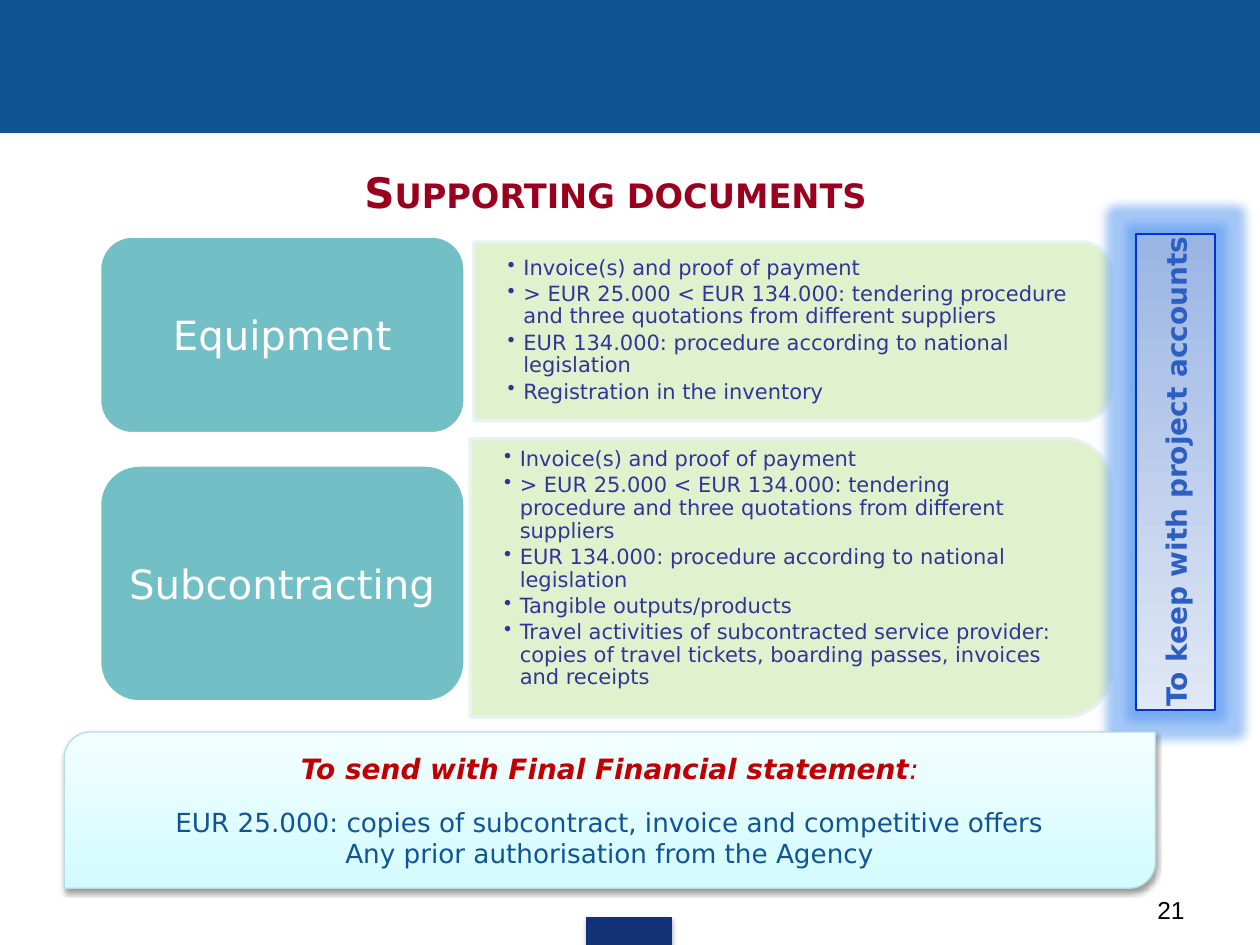
"""Build the slide on supporting documents for equipment and subcontracting."""
from dataclasses import dataclass

from lxml import etree
from pptx import Presentation
from pptx.dml.color import RGBColor
from pptx.enum.shapes import MSO_SHAPE
from pptx.enum.text import MSO_ANCHOR, PP_ALIGN
from pptx.oxml.ns import qn
from pptx.util import Pt

RECT = MSO_SHAPE.RECTANGLE
ROUNDED = MSO_SHAPE.ROUNDED_RECTANGLE
ROUND_SAME = MSO_SHAPE.ROUND_2_SAME_RECTANGLE
ROUND_DIAGONAL = MSO_SHAPE.ROUND_2_DIAG_RECTANGLE
TOP, MIDDLE, BOTTOM = MSO_ANCHOR.TOP, MSO_ANCHOR.MIDDLE, MSO_ANCHOR.BOTTOM
LEFT, CENTER, RIGHT = PP_ALIGN.LEFT, PP_ALIGN.CENTER, PP_ALIGN.RIGHT


@dataclass(frozen=True)
class Theme:
    """Colours, fonts and type sizes of the slide."""
    font: str = "DejaVu Sans"
    number_font: str = "Arial"
    band: str = "0F5494"
    tab: str = "133176"
    title: str = "9A001D"
    panel: str = "DDF0C8"
    panel_line: str = "E7F3F4"
    bullet: str = "333399"
    topic: str = "72BFC5"
    white: str = "FFFFFF"
    black: str = "000000"
    side_text: str = "2D5EC1"
    side_line: str = "0033CC"
    side_fill: tuple = ("E1E8F5", "9AB5E4")
    glow: str = "4A90EE"
    notice_heading: str = "C00000"
    notice_line: str = "B6DCDF"
    notice_fill: tuple = ("D3FBFF", "F2FEFF")
    title_size: float = 24
    topic_size: float = 23
    heading_size: float = 16
    notice_size: float = 15
    number_size: float = 14
    bullet_size: float = 12


class SlideBuilder:
    """Holds the theme and the current slide and draws each kind of element."""

    def __init__(self, slide, theme):
        self.slide, self.theme = slide, theme

    def shape(self, kind, box, fill, line, weight=0.75):
        """Add a preset shape with a solid or two-colour gradient fill."""
        shape = self.slide.shapes.add_shape(kind, *map(Pt, box))
        shape.shadow.inherit = False
        if isinstance(fill, tuple):
            shape.fill.gradient()
            for stop, position, color in zip(shape.fill.gradient_stops, (0, 1), fill):
                stop.position = position
                stop.color.rgb = RGBColor.from_string(color)
        else:
            shape.fill.solid()
            shape.fill.fore_color.rgb = RGBColor.from_string(fill)
        shape.line.color.rgb = RGBColor.from_string(line)
        shape.line.width = Pt(weight)
        return shape

    def effect(self, shape, name, color, alpha, **lengths):
        """Add a glow or shadow to the shape's effect list."""
        effects = shape._element.spPr.find(qn("a:effectLst"))
        node = etree.SubElement(effects, qn(f"a:{name}"),
                                {key: str(value) for key, value in lengths.items()})
        tint = etree.SubElement(node, qn("a:srgbClr"), val=color)
        etree.SubElement(tint, qn("a:alpha"), val=str(alpha * 1000))

    def drop_shadow(self, shape, alpha):
        """Add a soft shadow straight below the shape."""
        self.effect(shape, "outerShdw", self.theme.black, alpha, blurRad=Pt(3.1),
                    dist=Pt(1.7), dir=5400000, algn="ctr", rotWithShape=0)

    def style(self, run, size, color, font=None, bold=False, italic=False):
        """Format one run."""
        run.font.name = font or self.theme.font
        run.font.size = Pt(size)
        run.font.color.rgb = RGBColor.from_string(color)
        run.font.bold, run.font.italic = bold, italic

    def label(self, shape, text, size, color, align=CENTER, anchor=MIDDLE, wrap=True, **look):
        """Fill a shape with evenly styled paragraphs and return its frame."""
        frame = shape.text_frame
        frame.text = text
        frame.word_wrap, frame.vertical_anchor = wrap, anchor
        for paragraph in frame.paragraphs:
            paragraph.alignment = align
            for run in paragraph.runs:
                self.style(run, size, color, **look)
        return frame

    def text(self, box, text, size, color, **look):
        """Add a text box."""
        return self.label(self.slide.shapes.add_textbox(*map(Pt, box)), text, size, color, **look)

    def topic(self, box, name):
        """Add a rounded topic block."""
        block = self.shape(ROUNDED, box, self.theme.topic, self.theme.white, 2)
        self.label(block, name, self.theme.topic_size, self.theme.white)

    def panel(self, box, items, text_box, bottom_inset=10):
        """Add a panel rounded on its right side, with a bulleted list."""
        left, top, width, height = box
        turned = (left + (width - height) / 2, top + (height - width) / 2, height, width)
        panel = self.shape(ROUND_SAME, turned, self.theme.panel, self.theme.panel_line, 2)
        panel.rotation = 90
        for color in panel._element.spPr.iter(qn("a:srgbClr")):
            etree.SubElement(color, qn("a:alpha"), val="90000")
        frame = self.text(text_box, "\n".join(items), self.theme.bullet_size,
                          self.theme.bullet, align=LEFT)
        frame.margin_left = frame.margin_right = Pt(19.4)
        frame.margin_top, frame.margin_bottom = Pt(10), Pt(bottom_inset)
        for paragraph in frame.paragraphs:
            paragraph.line_spacing, paragraph.space_after = 0.9, Pt(2)
            properties = paragraph._p.get_or_add_pPr()
            properties.set("marL", str(Pt(9)))
            properties.set("indent", str(Pt(-9)))
            etree.SubElement(properties, qn("a:buChar"), char="•")

    def side_banner(self, center, length, thickness, message):
        """Add a glowing banner that reads upwards."""
        x, y = center
        box = (x - length / 2, y - thickness / 2, length, thickness)
        banner = self.shape(RECT, box, self.theme.side_fill, self.theme.side_line, 1)
        banner.fill.gradient_angle = 0
        banner.rotation = 270
        self.effect(banner, "glow", self.theme.glow, 50, rad=Pt(11))
        self.label(banner, message, self.theme.heading_size, self.theme.side_text,
                   wrap=False, bold=True)

    def notice(self, box, heading, lines):
        """Add the notice with a heading above plain lines."""
        theme = self.theme
        notice = self.shape(ROUND_DIAGONAL, box, theme.notice_fill, theme.notice_line)
        notice.fill.gradient_angle = 90
        self.drop_shadow(notice, 38)
        frame = self.label(notice, "\n".join([heading, *lines]), theme.notice_size, theme.band)
        first, second = frame.paragraphs[:2]
        self.style(first.runs[0], theme.heading_size, theme.notice_heading,
                   bold=True, italic=True)
        colon = first.add_run()
        colon.text = ":"
        self.style(colon, theme.heading_size, theme.notice_heading, italic=True)
        second.space_before = Pt(12.3)


def main():
    """Draw the slide and save it."""
    theme = Theme()
    deck = Presentation()
    deck.slide_width, deck.slide_height = Pt(720), Pt(540)
    page = SlideBuilder(deck.slides.add_slide(deck.slide_layouts[6]), theme)

    page.shape(RECT, (0, 0, 720, 75.6), theme.band, theme.band)
    footer_tab = page.shape(RECT, (335.5, 524.2, 48.2, 15.8), theme.tab, theme.tab)
    page.drop_shadow(footer_tab, 35)
    title = page.text((149.8, 82.8, 404, 44.6), "Supporting documents", theme.title_size,
                      theme.title, anchor=BOTTOM, bold=True)
    title.paragraphs[0].runs[0].font._element.set("cap", "small")
    page.text((516.2, 508, 167.8, 24), "21", theme.number_size, theme.black,
              align=RIGHT, anchor=TOP, font=theme.number_font)

    purchase_rules = [
        "Invoice(s) and proof of payment",
        "> EUR 25.000 < EUR 134.000: tendering procedure and three quotations "
        "from different suppliers",
        "EUR 134.000: procedure according to national legislation",
    ]
    page.panel((270.7, 138.2, 364.3, 102.2),
               purchase_rules + ["Registration in the inventory"],
               (270.7, 142.6, 359.3, 92.2))
    page.topic((56.9, 134.9, 208.9, 113), "Equipment")
    page.panel((268.6, 250.6, 366.5, 159.1),
               purchase_rules + [
                   "Tangible outputs/products",
                   "Travel activities of subcontracted service provider: copies of travel "
                   "tickets, boarding passes, invoices and receipts"],
               (268.6, 258.5, 358.6, 143.3), bottom_inset=20)
    page.topic((56.9, 265.7, 208.9, 135.4), "Subcontracting")

    page.side_banner((671.8, 269.6), 272.2, 45.4, "To keep with project accounts")
    page.notice((36.7, 418.3, 623.5, 89.3), "To send with Final Financial statement",
                ["EUR 25.000: copies of subcontract, invoice and competitive offers",
                 "Any prior authorisation from the Agency"])
    deck.save("out.pptx")


if __name__ == "__main__":
    main()
